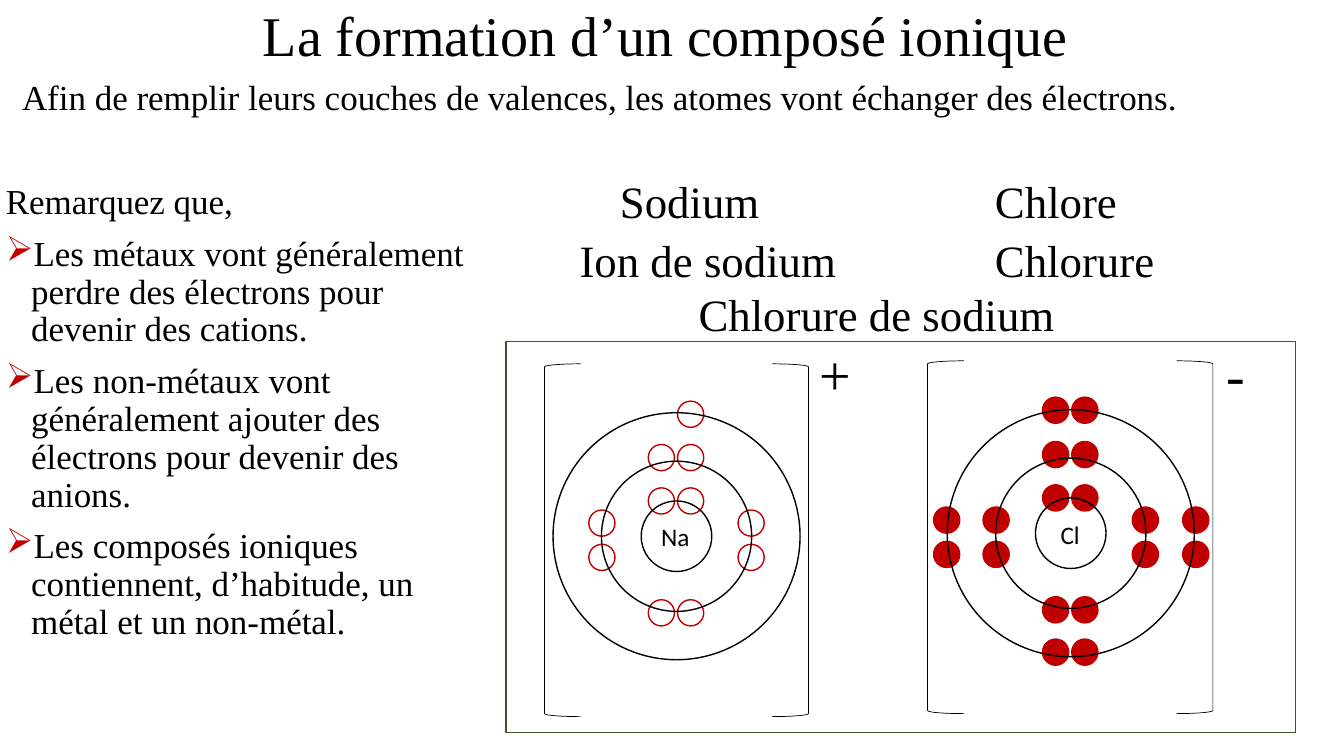
"""Build a slide on how sodium and chlorine form an ionic compound."""
from dataclasses import dataclass

import lxml.etree
import pptx
import pptx.dml.color
import pptx.enum.shapes
import pptx.enum.text
import pptx.oxml.ns
import pptx.shapes.autoshape
import pptx.slide
import pptx.text.text
import pptx.util

Inches = pptx.util.Inches
Pt = pptx.util.Pt
Form = pptx.enum.shapes.MSO_SHAPE
Fit = pptx.enum.text.MSO_AUTO_SIZE
Align = pptx.enum.text.PP_ALIGN
Anchor = pptx.enum.text.MSO_ANCHOR
Color = pptx.dml.color.RGBColor


@dataclass(frozen=True)
class Theme:
    """Hold the colours, fonts and type sizes of the slide."""
    ink: Color = Color(0, 0, 0)
    white: Color = Color(255, 255, 255)
    red: Color = Color(0xC0, 0, 0)
    green: Color = Color(0x38, 0x57, 0x23)
    serif: str = "Times New Roman"
    sans: str = "Calibri"
    title: int = 40
    name: int = 32
    body: int = 25
    symbol: int = 18


@dataclass(frozen=True)
class Box:
    """Give a place in inches."""
    left: float
    top: float
    width: float
    height: float


@dataclass(frozen=True)
class Label:
    """Describe one line of text that does not wrap."""
    text: str
    box: Box
    size: int
    font: str


@dataclass(frozen=True)
class Atom:
    """Describe an ion by centre, electron spots, fill and bracket edges."""
    x: float
    y: float
    spots: list[tuple[float, float]]
    fill: Color
    left: float
    right: float


THEME = Theme()
DOT = 0.26
RINGS = (0.7, 1.49, 2.45)
PAIR = (-0.15, 0.14)
RISE = (-0.13, 0.21)
FIRST = [(x, -0.35) for x in PAIR]
SECOND = [(x, y) for y in (-0.78, 0.76) for x in PAIR]
SECOND += [(x, y) for x in (-0.74, 0.74) for y in RISE]
THIRD = [(x, y) for y in (-1.22, 1.18) for x in PAIR]
THIRD += [(x, y) for x in (-1.23, 1.24) for y in RISE]
ATOMS = (
    Atom(6.71, 5.32, FIRST + SECOND + [(0.14, -1.21)], THEME.white, 5.4, 7.66),
    Atom(10.62, 5.29, FIRST + SECOND + THIRD, THEME.red, 9.2, 11.67),
)
LABELS = (
    Label("Sodium", Box(6.05, 1.67, 1.6, 0.64), THEME.name, THEME.serif),
    Label("Chlore", Box(9.77, 1.67, 1.42, 0.64), THEME.name, THEME.serif),
    Label("Ion de sodium", Box(5.65, 2.26, 2.77, 0.64), THEME.name, THEME.serif),
    Label("Chlorure", Box(9.77, 2.26, 1.8, 0.64), THEME.name, THEME.serif),
    Label("Chlorure de sodium", Box(6.83, 2.8, 3.77, 0.64), THEME.name, THEME.serif),
    Label("Na", Box(6.46, 5.12, 0.49, 0.4), THEME.symbol, THEME.sans),
    Label("Cl", Box(10.42, 5.1, 0.39, 0.4), THEME.symbol, THEME.sans),
    Label("+", Box(8.03, 3.32, 0.52, 0.77), THEME.title, THEME.serif),
    Label("-", Box(12.07, 3.32, 0.39, 0.77), THEME.title, THEME.serif),
)
NOTES = (
    "Remarquez que,",
    "Les métaux vont généralement perdre des électrons pour devenir des cations.",
    "Les non-métaux vont généralement ajouter des électrons pour devenir des anions.",
    "Les composés ioniques contiennent, d’habitude, un métal et un non-métal.",
)


def spread(box: Box) -> tuple[int, int, int, int]:
    """Turn a box into lengths."""
    return Inches(box.left), Inches(box.top), Inches(box.width), Inches(box.height)


def style(para: pptx.text.text._Paragraph, size: int, font: str = THEME.serif) -> None:
    """Format every run of a paragraph."""
    for run in para.runs:
        run.font.size = Pt(size)
        run.font.name = font
        run.font.color.rgb = THEME.ink


def mark(para: pptx.text.text._Paragraph) -> None:
    """Give a paragraph a red arrow bullet and a hanging indent."""
    props = para._p.get_or_add_pPr()
    props.set("marL", str(Inches(0.25)))
    props.set("indent", str(-Inches(0.25)))
    tint = lxml.etree.SubElement(props, pptx.oxml.ns.qn("a:buClr"))
    lxml.etree.SubElement(tint, pptx.oxml.ns.qn("a:srgbClr"), val=str(THEME.red))
    lxml.etree.SubElement(props, pptx.oxml.ns.qn("a:buChar"), char="➢")


def draw(slide: pptx.slide.Slide, form: Form, box: Box, line: Color,
         fill: Color | None = None, weight: float = 1) -> None:
    """Draw an outlined shape with an optional fill."""
    shape = slide.shapes.add_shape(form, *spread(box))
    shape.shadow.inherit = False
    shape.line.color.rgb = line
    shape.line.width = Pt(weight)
    if fill is None:
        shape.fill.background()
    else:
        shape.fill.solid()
        shape.fill.fore_color.rgb = fill


def disc(slide: pptx.slide.Slide, x: float, y: float, size: float,
         line: Color, fill: Color | None = None) -> None:
    """Draw a circle around its centre."""
    draw(slide, Form.OVAL, Box(x - size / 2, y - size / 2, size, size), line, fill)


def build(slide: pptx.slide.Slide, atom: Atom) -> None:
    """Draw the electrons, shells and brackets of an ion."""
    for x, y in atom.spots:
        disc(slide, atom.x + x, atom.y + y, DOT, THEME.red, atom.fill)
    for size in RINGS:
        disc(slide, atom.x, atom.y, size, THEME.ink)
    for form, left in ((Form.LEFT_BRACKET, atom.left), (Form.RIGHT_BRACKET, atom.right)):
        draw(slide, form, Box(left, atom.y - 1.71, 0.36, 3.5), THEME.ink, weight=0.5)


def tag(slide: pptx.slide.Slide, label: Label) -> None:
    """Write a label."""
    frame = slide.shapes.add_textbox(*spread(label.box)).text_frame
    frame.word_wrap = False
    frame.auto_size = Fit.SHAPE_TO_FIT_TEXT
    frame.text = label.text
    style(frame.paragraphs[0], label.size, label.font)


def write(slide: pptx.slide.Slide, box: Box, lines: tuple[str, ...]) -> None:
    """Write wrapped body text, with bullets after the first line."""
    frame = slide.shapes.add_textbox(*spread(box)).text_frame
    frame.word_wrap = True
    frame.text = "\n".join(lines)
    for rank, para in enumerate(frame.paragraphs):
        if rank:
            mark(para)
            para.space_before = Pt(10)
        para.line_spacing = 0.9
        style(para, THEME.body)


def head(slide: pptx.slide.Slide) -> None:
    """Place and format the title."""
    title = slide.shapes.title
    title.left, title.top, title.width, title.height = spread(Box(0.85, 0.03, 11.5, 0.71))
    frame = title.text_frame
    frame.text = "La formation d’un composé ionique"
    frame.auto_size = Fit.NONE
    frame.vertical_anchor = Anchor.MIDDLE
    para = frame.paragraphs[0]
    para.alignment = Align.CENTER
    para.line_spacing = 0.9
    style(para, THEME.title)


def main() -> None:
    """Build and save the slide."""
    deck = pptx.Presentation()
    deck.slide_width, deck.slide_height = Inches(13.33), Inches(7.5)
    slide = deck.slides.add_slide(deck.slide_layouts[5])
    head(slide)
    write(slide, Box(0.12, 0.75, 13.09, 0.57), (
        "Afin de remplir leurs couches de valences, les atomes vont échanger des électrons.",))
    for atom in ATOMS:
        build(slide, atom)
    draw(slide, Form.RECTANGLE, Box(5.02, 3.39, 7.83, 3.88), THEME.green)
    for label in LABELS:
        tag(slide, label)
    write(slide, Box(-0.04, 1.78, 4.91, 5.72), NOTES)
    deck.save("out.pptx")


if __name__ == "__main__":
    main()
